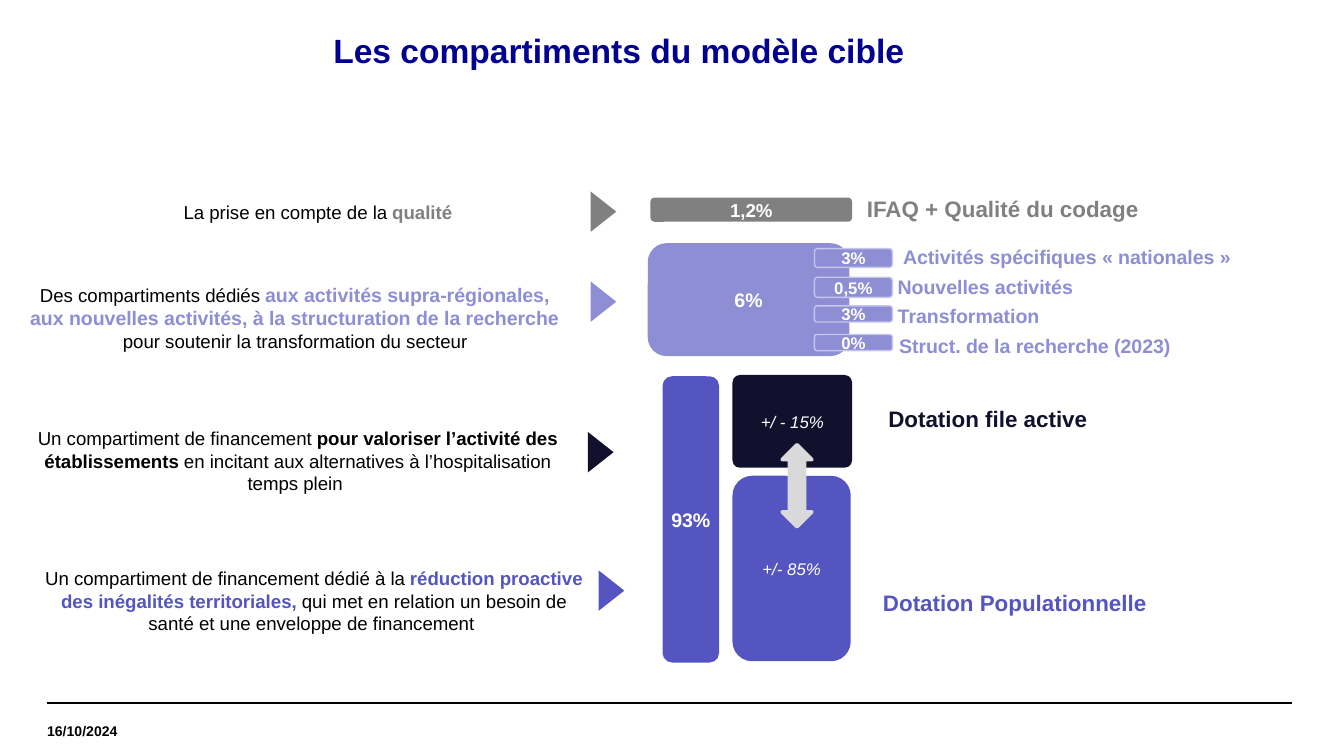
import pptx
import pptx.util
import pptx.dml.color
import pptx.enum.shapes
import pptx.enum.text
import pptx.oxml

COLS, ROWS = 100, 56.25
CELL = 0.1
FONT = "Arial"
COLORS = {
    "title": "000091",
    "text": "000000",
    "quality": "808080",
    "specific": "8E8ED5",
    "outline": "C6C6EA",
    "activity": "11112D",
    "population": "5555C1",
    "arrow": "D9D9D9",
    "white": "FFFFFF",
}
SHAPE = pptx.enum.shapes.MSO_SHAPE
ALIGN = pptx.enum.text.PP_ALIGN
ANCHOR = pptx.enum.text.MSO_ANCHOR


def grid(*cells):
    return [pptx.util.Inches(c * CELL) for c in cells]


def rgb(name):
    return pptx.dml.color.RGBColor.from_string(COLORS[name])


def style(r, size, color, bold=False, italic=False):
    r.font.name = FONT
    r.font.size = pptx.util.Pt(size)
    r.font.color.rgb = rgb(color)
    r.font.bold = bold
    r.font.italic = italic


def clear_margins(tf):
    tf.margin_left = tf.margin_right = tf.margin_top = tf.margin_bottom = 0


def add_title(s, text):
    sp = s.shapes.title
    sp.left, sp.top, sp.width, sp.height = grid(23.8, 1, 74, 5.9)
    sp.text_frame.text = text
    sp.text_frame.vertical_anchor = ANCHOR.MIDDLE
    p = sp.text_frame.paragraphs[0]
    p.alignment = ALIGN.LEFT
    p.line_spacing = 0.9
    style(p.runs[0], 18, "title", bold=True)


def add_text(s, box, runs, align=ALIGN.LEFT, anchor=ANCHOR.TOP):
    tf = s.shapes.add_textbox(*grid(*box)).text_frame
    tf.word_wrap = True
    tf.vertical_anchor = anchor
    clear_margins(tf)
    p = tf.paragraphs[0]
    p.alignment = align
    for text, size, color, bold in runs:
        r = p.add_run()
        r.text = text
        style(r, size, color, bold)


def add_shape(s, kind, box, fill, line=None, width=0.75):
    sp = s.shapes.add_shape(kind, *grid(*box))
    sp.shadow.inherit = False
    sp.fill.solid()
    sp.fill.fore_color.rgb = rgb(fill)
    if line:
        sp.line.color.rgb = rgb(line)
        sp.line.width = pptx.util.Pt(width)
    else:
        sp.line.fill.background()
    return sp


def add_block(s, box, fill, text, size, italic=False, line=None):
    sp = add_shape(s, SHAPE.ROUNDED_RECTANGLE, box, fill, line)
    tf = sp.text_frame
    tf.text = text
    tf.word_wrap = True
    tf.vertical_anchor = ANCHOR.MIDDLE
    clear_margins(tf)
    p = tf.paragraphs[0]
    p.alignment = ALIGN.CENTER
    style(p.runs[0], size, "white", not italic, italic)
    return sp


def add_statement(s, box, anchor, pointer, color, runs):
    add_text(s, box, runs, ALIGN.CENTER, anchor)
    sp = add_shape(s, SHAPE.ISOSCELES_TRIANGLE, (*pointer, 3, 1.9), color)
    sp.rotation = 90


def add_statements(s):
    add_statement(s, (3.5, 14.9, 40.3, 1.7), ANCHOR.MIDDLE, (43.4, 14.8), "quality", [
        ("La prise en compte de la ", 10, "text", False),
        ("qualité", 10, "quality", True),
    ])
    add_statement(s, (1.8, 21, 40.3, 5.2), ANCHOR.MIDDLE, (43.4, 21.5), "specific", [
        ("Des compartiments dédiés ", 10, "text", False),
        ("aux activités supra-régionales, aux nouvelles activités, "
         "à la structuration de la recherche ", 10.5, "specific", True),
        ("pour soutenir la transformation du secteur", 10, "text", False),
    ])
    add_statement(s, (2, 32, 40.3, 4.6), ANCHOR.MIDDLE, (43.2, 32.7), "activity", [
        ("Un compartiment de financement ", 10, "text", False),
        ("pour valoriser l’activité des établissements", 10, "text", True),
        (" en incitant aux alternatives à l’hospitalisation temps plein ",
         10, "text", False),
    ])
    add_statement(s, (3.2, 42.2, 40.3, 5), ANCHOR.TOP, (44, 43), "population", [
        ("Un compartiment de financement dédié à la ", 10, "text", False),
        ("réduction proactive des inégalités territoriales, ",
         10, "population", True),
        ("qui met en relation un besoin de santé et une enveloppe "
         "de financement ", 10, "text", False),
    ])


def add_compartments(s):
    sp = add_block(s, (54.5, 27.9, 8.9, 6.9), "activity", "+/ - 15%", 9, italic=True)
    sp.adjustments[0] = 0.08
    add_block(s, (54.5, 35.4, 8.8, 13.8), "population", "+/- 85%", 9, italic=True)
    add_block(s, (48.4, 14.7, 15, 1.8), "quality", "1,2%", 10)
    add_block(s, (48.2, 18.1, 15, 8.4), "specific", "6%", 10.5)
    add_shape(s, SHAPE.UP_DOWN_ARROW, (58.2, 33.1, 2.2, 6.1), "arrow", "arrow", 2)
    add_block(s, (49.3, 28, 4.2, 21.3), "population", "93%", 10.5)


def add_specific_activities(s):
    activities = [
        ("3%", 1.4, 67.2, "Activités spécifiques «\u00a0nationales\u00a0»"),
        ("0,5%", 1.5, 66.8, "Nouvelles activités"),
        ("3%", 1.2, 66.8, "Transformation"),
        ("0%", 1.2, 66.9, "Struct. de la recherche (2023)"),
    ]
    for i, (share, height, left, label) in enumerate(activities):
        add_block(s, (60.6, 18.5 + 2.13 * i, 5.8, height), "specific", share, 9,
                  line="outline")
        add_text(s, (left, 18.25 + 2.19 * i, 30, 1.8),
                 [(label, 10.5, "specific", True)])


def add_labels(s):
    for left, top, text, color in [
        (64.5, 14.5, "IFAQ + Qualité du codage", "quality"),
        (66.1, 30.15, "Dotation file active", "activity"),
        (65.7, 43.85, "Dotation Populationnelle", "population"),
    ]:
        add_text(s, (left, top, 31, 2), [(text, 12, color, True)])


def add_footer(s, date):
    for left in (3.5, 3.9):
        sp = s.shapes.add_connector(
            pptx.enum.shapes.MSO_CONNECTOR.STRAIGHT,
            *grid(left, 52.3, left + 92.2, 52.3))
        sp.line.color.rgb = rgb("text")
        sp.line.width = pptx.util.Pt(0.8)
        sp._element.spPr.append(pptx.oxml.parse_xml(
            '<a:effectLst xmlns:a='
            '"http://schemas.openxmlformats.org/drawingml/2006/main"/>'))
    add_text(s, (3.5, 52.5, 13.2, 3.8), [(date, 7.5, "text", True)],
             anchor=ANCHOR.MIDDLE)


def main():
    prs = pptx.Presentation()
    prs.slide_width, prs.slide_height = grid(COLS, ROWS)
    s = prs.slides.add_slide(prs.slide_layouts[5])
    add_title(s, "Les compartiments du modèle cible")
    add_statements(s)
    add_compartments(s)
    add_specific_activities(s)
    add_labels(s)
    add_footer(s, "16/10/2024")
    prs.save("out.pptx")


if __name__ == "__main__":
    main()
